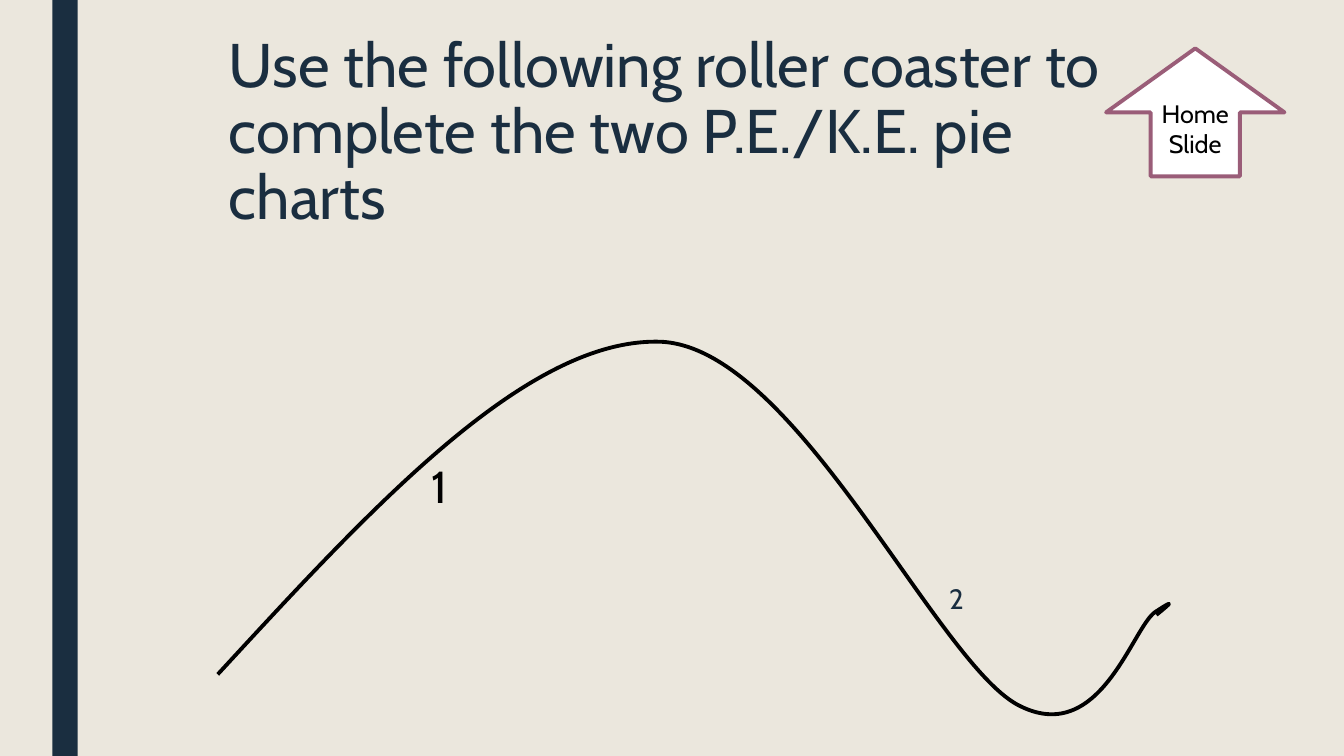
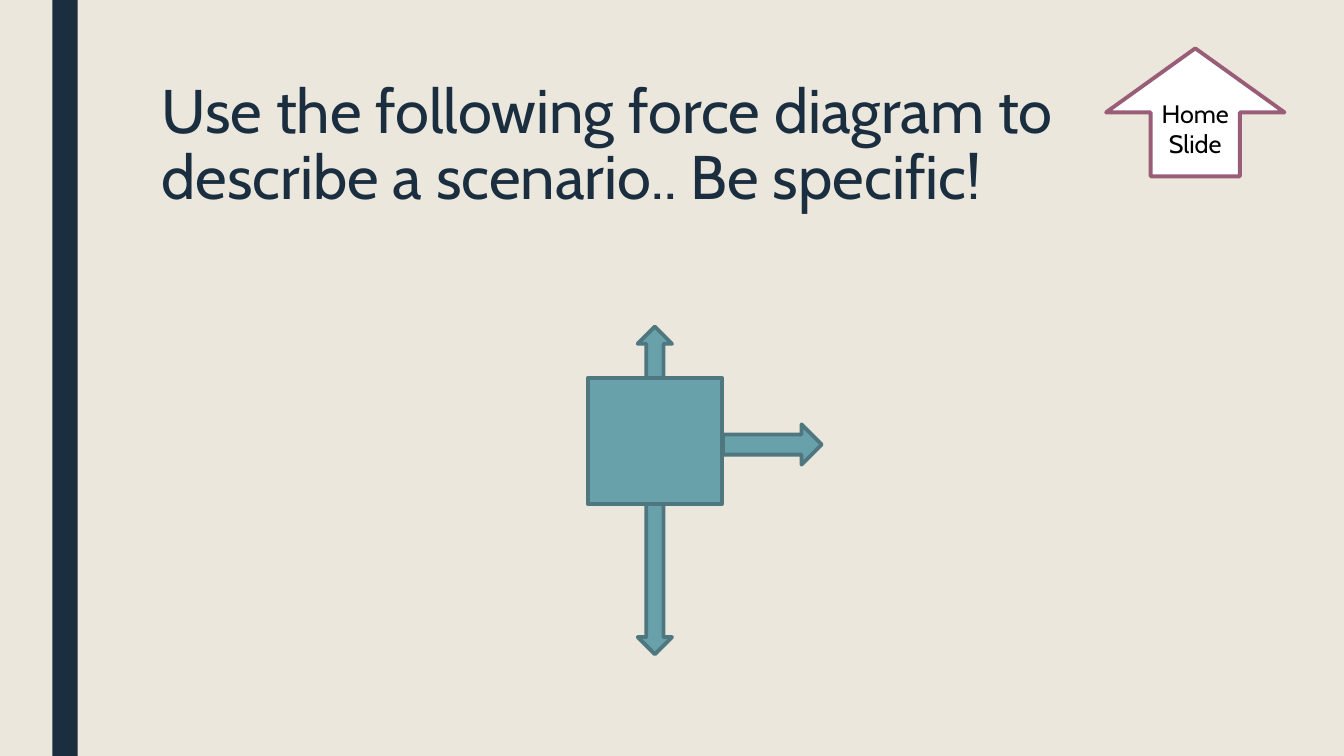
"""Build two physics review slides: a roller coaster and a force diagram."""
import lxml.etree
import pptx
import pptx.dml.color
import pptx.enum.shapes
import pptx.enum.text
import pptx.oxml.ns
import pptx.util

SHAPE = pptx.enum.shapes.MSO_SHAPE
ALIGN = pptx.enum.text.PP_ALIGN
ANCHOR = pptx.enum.text.MSO_ANCHOR
FONT = "Cabin"
SAND, NAVY, PLUM = "EBE7DD", "1A2E40", "9A5D78"
TEAL, SLATE, WHITE, BLACK = "69A1AB", "4E777F", "FFFFFF", "000000"
LINE_WIDTH = 2.75

WIDTH, HEIGHT = 13.33, 7.5
BAND = (0.52, 0, 0.25, HEIGHT)
HOME = ("Home Slide", (10.97, 0.48, 1.77, 1.27))

COASTER_TITLE = ("Use the following roller coaster to complete the two P.E./K.E. pie charts",
                 (2.17, 0.3, 9, 2.37))
FORCE_TITLE = ("Use the following force diagram to describe a scenario.. Be specific!",
               (1.5, 0.75, 10.5, 1.62))
POINT_1 = (" 1", (4.08, 4.5, 0.92, 1.01))
POINT_2 = (" 2", (9.25, 5.75, 0.92, 1))

TRACK_BOX = (2.16, 3.39, 9.43, 3.69)
TRACK_START = (2.16, 6.69)
TRACK_CURVES = [
    ((3.7, 5.02), (5.23, 3.35), (6.55, 3.39)),
    ((7.88, 3.44), (9.27, 6.54), (10.09, 6.99)),
    ((10.91, 7.43), (11.23, 6.22), (11.46, 6.07)),
    ((11.69, 5.92), (11.58, 6.01), (11.47, 6.1)),
]

BLOCK = (5.83, 3.75, 1.33, 1.25)
ARROW_THICKNESS = 0.34
UP_FORCE, DOWN_FORCE = 0.51, 1.49
SIDE_ARROW = (7.46, 3.92, 0.4, 0.98)


def color(value):
    return pptx.dml.color.RGBColor.from_string(value)


def inches(values):
    return [pptx.util.Inches(v) for v in values]


def add_node(parent, tag, **attributes):
    return lxml.etree.SubElement(parent, pptx.oxml.ns.qn(tag), **attributes)


def place(sp, box):
    sp.left, sp.top, sp.width, sp.height = inches(box)


def write(sp, text, size, ink, align=ALIGN.LEFT, anchor=ANCHOR.TOP, spacing=None):
    tf = sp.text_frame
    tf.word_wrap = True
    tf.auto_size = pptx.enum.text.MSO_AUTO_SIZE.NONE
    tf.vertical_anchor = anchor
    p = tf.paragraphs[0]
    p.alignment = align
    p.line_spacing = spacing
    r = p.add_run()
    r.text = text
    r.font.name = FONT
    r.font.size = pptx.util.Pt(size)
    r.font.color.rgb = color(ink)
    return p


def outline(sp, ink):
    sp.line.color.rgb = color(ink)
    sp.line.width = pptx.util.Pt(LINE_WIDTH)


def add_shape(slide, kind, box, fill, line=None, rotation=0):
    sp = slide.shapes.add_shape(kind, *inches(box))
    sp.rotation = rotation
    sp.shadow.inherit = False
    sp.fill.solid()
    sp.fill.fore_color.rgb = color(fill)
    if line:
        outline(sp, line)
    else:
        sp.line.fill.background()
    return sp


def add_slide(prs, layout, title):
    slide = prs.slides.add_slide(prs.slide_layouts[layout])
    text, box = title
    place(slide.shapes.title, box)
    write(slide.shapes.title, text, 44, NAVY, spacing=0.89)
    return slide


def add_home(slide):
    text, box = HOME
    sp = add_shape(slide, SHAPE.UP_ARROW, box, WHITE, PLUM)
    write(sp, text, 18, BLACK, ALIGN.CENTER, ANCHOR.MIDDLE)


def style_master(prs, slide):
    master = prs.slide_master
    master.background.fill.solid()
    master.background.fill.fore_color.rgb = color(SAND)
    band = add_shape(slide, SHAPE.RECTANGLE, BAND, NAVY).element
    band.nvSpPr.cNvPr.id = 99
    master.element.cSld.spTree.insert(2, band)


def add_track(slide):
    left, top, width, height = TRACK_BOX
    builder = slide.shapes.build_freeform(*inches((left, top)))
    builder.add_line_segments([inches((left + width, top + height))], close=False)
    sp = builder.convert_to_shape()
    sp.shadow.inherit = False
    sp.fill.background()
    outline(sp, BLACK)
    track = sp.element.xpath(".//a:path")[0]
    for node in list(track):
        track.remove(node)
    steps = [("a:moveTo", [TRACK_START])]
    steps += [("a:cubicBezTo", curve) for curve in TRACK_CURVES]
    for tag, points in steps:
        step = add_node(track, tag)
        for x, y in points:
            dx, dy = inches((x - left, y - top))
            add_node(step, "a:pt", x=str(int(dx)), y=str(int(dy)))


def add_points(slide):
    text, box = POINT_2
    body = slide.placeholders[1]
    place(body, box)
    p = write(body, text, 20, NAVY, spacing=0.94)
    p.space_before, p.space_after = pptx.util.Pt(10), pptx.util.Pt(2)
    pPr = p._p.get_or_add_pPr()
    pPr.set("marL", "0")
    pPr.set("indent", "0")
    add_node(pPr, "a:buNone")
    text, box = POINT_1
    write(slide.shapes.add_textbox(*inches(box)), text, 32, BLACK)


def add_forces(slide):
    left, top, width, height = BLOCK
    x = left + (width - ARROW_THICKNESS) / 2
    add_shape(slide, SHAPE.RECTANGLE, BLOCK, TEAL, SLATE)
    arrows = [
        ((x, top + height, ARROW_THICKNESS, DOWN_FORCE), 0),
        (SIDE_ARROW, 270),
        ((x, top - UP_FORCE, ARROW_THICKNESS, UP_FORCE), 180),
    ]
    for box, rotation in arrows:
        add_shape(slide, SHAPE.DOWN_ARROW, box, TEAL, SLATE, rotation)


def main():
    prs = pptx.Presentation()
    prs.slide_width, prs.slide_height = inches((WIDTH, HEIGHT))
    coaster = add_slide(prs, 1, COASTER_TITLE)
    style_master(prs, coaster)
    add_track(coaster)
    add_points(coaster)
    add_home(coaster)
    forces = add_slide(prs, 5, FORCE_TITLE)
    add_forces(forces)
    add_home(forces)
    prs.save("out.pptx")


if __name__ == "__main__":
    main()
